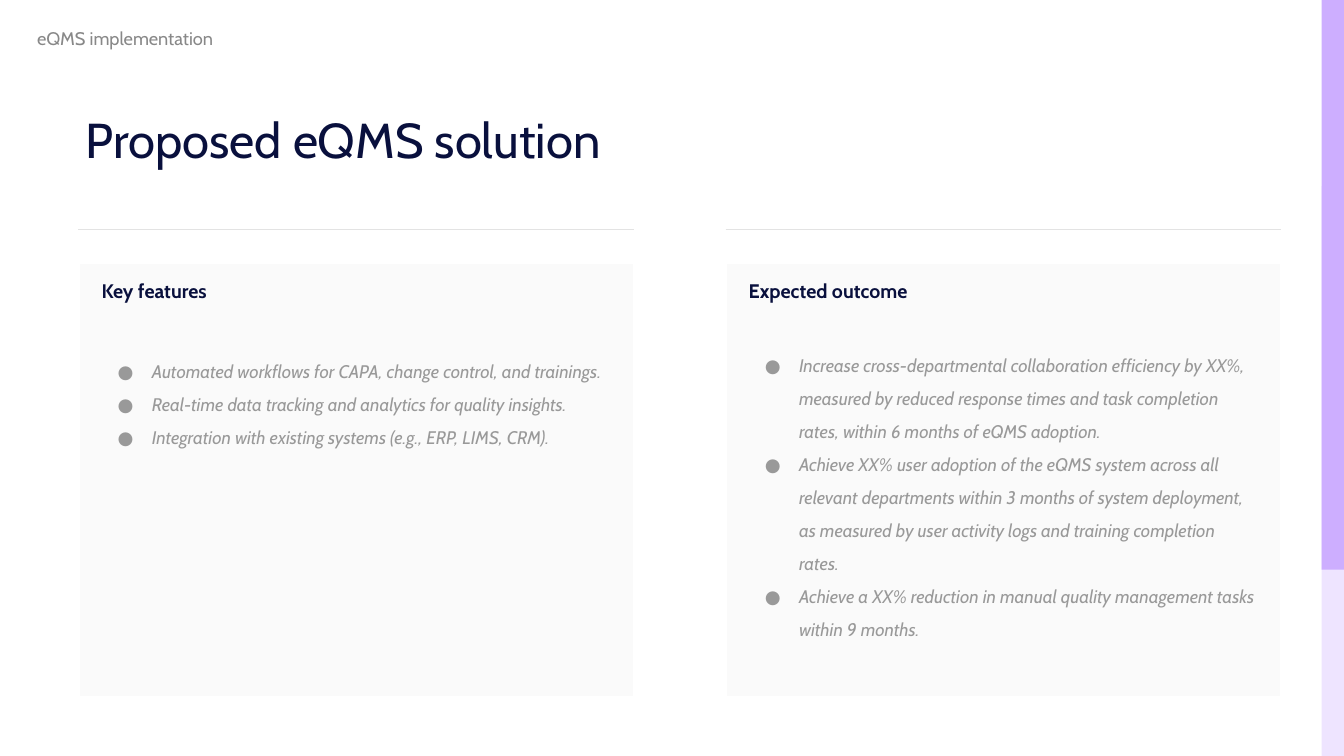
from dataclasses import dataclass

import lxml.etree
import pptx
import pptx.dml.color
import pptx.enum.shapes
import pptx.enum.text
import pptx.oxml.ns
import pptx.util

Pt = pptx.util.Pt
qn = pptx.oxml.ns.qn


@dataclass(frozen=True)
class Theme:
    font: str = "Cabin"
    navy: str = "09103D"
    label_grey: str = "888888"
    body_grey: str = "999999"
    rule_grey: str = "E3E3E3"
    panel: str = "FAFAFA"
    white: str = "FFFFFF"
    lilac: str = "CDAEFF"
    pale_lilac: str = "EEE4FF"
    title_size: int = 35
    heading_size: int = 14
    body_size: int = 13


def rgb(value):
    return pptx.dml.color.RGBColor.from_string(value)


class SlideBuilder:
    def __init__(self, slide, theme):
        self.slide = slide
        self.theme = theme

    def run(self, paragraph, words, size, color, bold=False, italic=False):
        run = paragraph.add_run()
        run.text = words
        font = run.font
        font.name, font.size = self.theme.font, Pt(size)
        font.bold, font.italic = bold, italic
        font.color.rgb = rgb(color)

    def bar(self, left, top, width, height, color):
        bar = self.slide.shapes.add_shape(
            pptx.enum.shapes.MSO_SHAPE.RECTANGLE,
            Pt(left), Pt(top), Pt(width), Pt(height))
        bar.shadow.inherit = False
        bar.fill.solid()
        bar.fill.fore_color.rgb = rgb(color)
        bar.line.fill.background()

    def text(self, left, top, width, height, inset, words, size, color):
        box = self.slide.shapes.add_textbox(Pt(left), Pt(top), Pt(width), Pt(height))
        frame = box.text_frame
        frame.word_wrap = True
        frame.margin_left = frame.margin_right = Pt(7.2)
        frame.margin_top = frame.margin_bottom = Pt(inset)
        self.run(frame.paragraphs[0], words, size, color)

    def rule(self, left, top, width):
        rule = self.slide.shapes.add_connector(
            pptx.enum.shapes.MSO_CONNECTOR.STRAIGHT,
            Pt(left), Pt(top), Pt(left + width), Pt(top))
        rule.line.color.rgb = rgb(self.theme.rule_grey)
        rule.line.width = Pt(0.75)
        properties = rule._element.find(qn("p:spPr"))
        lxml.etree.SubElement(properties, qn("a:effectLst"))

    def borders(self, cell, color, width):
        """Draw all four cell borders, ahead of the fill as the schema asks."""
        properties = cell._tc.get_or_add_tcPr()
        for position, side in enumerate(("a:lnL", "a:lnR", "a:lnT", "a:lnB")):
            line = lxml.etree.Element(qn(side), w=str(Pt(width)))
            fill = lxml.etree.SubElement(line, qn("a:solidFill"))
            lxml.etree.SubElement(fill, qn("a:srgbClr"), val=color)
            properties.insert(position, line)

    def bullet(self, paragraph, words):
        properties = paragraph._p.get_or_add_pPr()
        properties.set("marL", str(Pt(36)))
        properties.set("indent", str(Pt(-24.5)))
        paragraph.line_spacing = 1.5
        color = lxml.etree.SubElement(properties, qn("a:buClr"))
        lxml.etree.SubElement(color, qn("a:srgbClr"), val=self.theme.body_grey)
        lxml.etree.SubElement(properties, qn("a:buFont"), typeface=self.theme.font)
        lxml.etree.SubElement(properties, qn("a:buChar"), char="●")
        self.run(paragraph, words, self.theme.body_size, self.theme.body_grey, italic=True)

    def panel(self, left, top, width, height, heading, points, gap):
        """Add a one-cell table: a heading, then bullets `gap` points below it."""
        table = self.slide.shapes.add_table(
            1, 1, Pt(left), Pt(top), Pt(width), Pt(height)).table
        table.first_row = table.horz_banding = False
        cell = table.cell(0, 0)
        cell.fill.solid()
        cell.fill.fore_color.rgb = rgb(self.theme.panel)
        self.borders(cell, self.theme.white, 2.25)
        cell.vertical_anchor = pptx.enum.text.MSO_ANCHOR.TOP
        cell.margin_left = cell.margin_right = Pt(16.5)
        cell.margin_top = cell.margin_bottom = Pt(12.25)
        frame = cell.text_frame
        self.run(frame.paragraphs[0], heading, self.theme.heading_size,
                 self.theme.navy, bold=True)
        for index, point in enumerate(points):
            paragraph = frame.add_paragraph()
            paragraph.space_before = Pt(0 if index else gap)
            self.bullet(paragraph, point)


COLUMNS = (
    ("Key features", 33, (
        "Automated workflows for CAPA, change control, and trainings.",
        "Real-time data tracking and analytics for quality insights.",
        "Integration with existing systems (e.g., ERP, LIMS, CRM).",
    )),
    ("Expected outcome", 29, (
        "Increase cross-departmental collaboration efficiency by XX%, measured by "
        "reduced response times and task completion rates, within 6 months of eQMS adoption.",
        "Achieve XX% user adoption of the eQMS system across all relevant departments "
        "within 3 months of system deployment, as measured by user activity logs and "
        "training completion rates.",
        "Achieve a XX% reduction in manual quality management tasks within 9 months.",
    )),
)


def main():
    deck = pptx.Presentation()
    deck.slide_width, deck.slide_height = Pt(960), Pt(540)
    theme = Theme()
    builder = SlideBuilder(deck.slides.add_slide(deck.slide_layouts[6]), theme)

    builder.bar(944, 133, 16, 407, theme.pale_lilac)
    builder.bar(944, 0, 16, 407, theme.lilac)
    builder.text(19.5, 12.5, 155.5, 29, 7.2, "eQMS implementation",
                 theme.body_size, theme.label_grey)
    builder.text(54, 75, 560, 50, 3.6, "Proposed eQMS solution",
                 theme.title_size, theme.navy)

    first_left, column_step, column_width = 56, 462.25, 397
    for index, (heading, gap, points) in enumerate(COLUMNS):
        left = first_left + index * column_step
        builder.rule(left, 164, column_width)
        builder.panel(left, 187.5, column_width, 310.5, heading, points, gap)

    deck.save("out.pptx")


if __name__ == "__main__":
    main()
